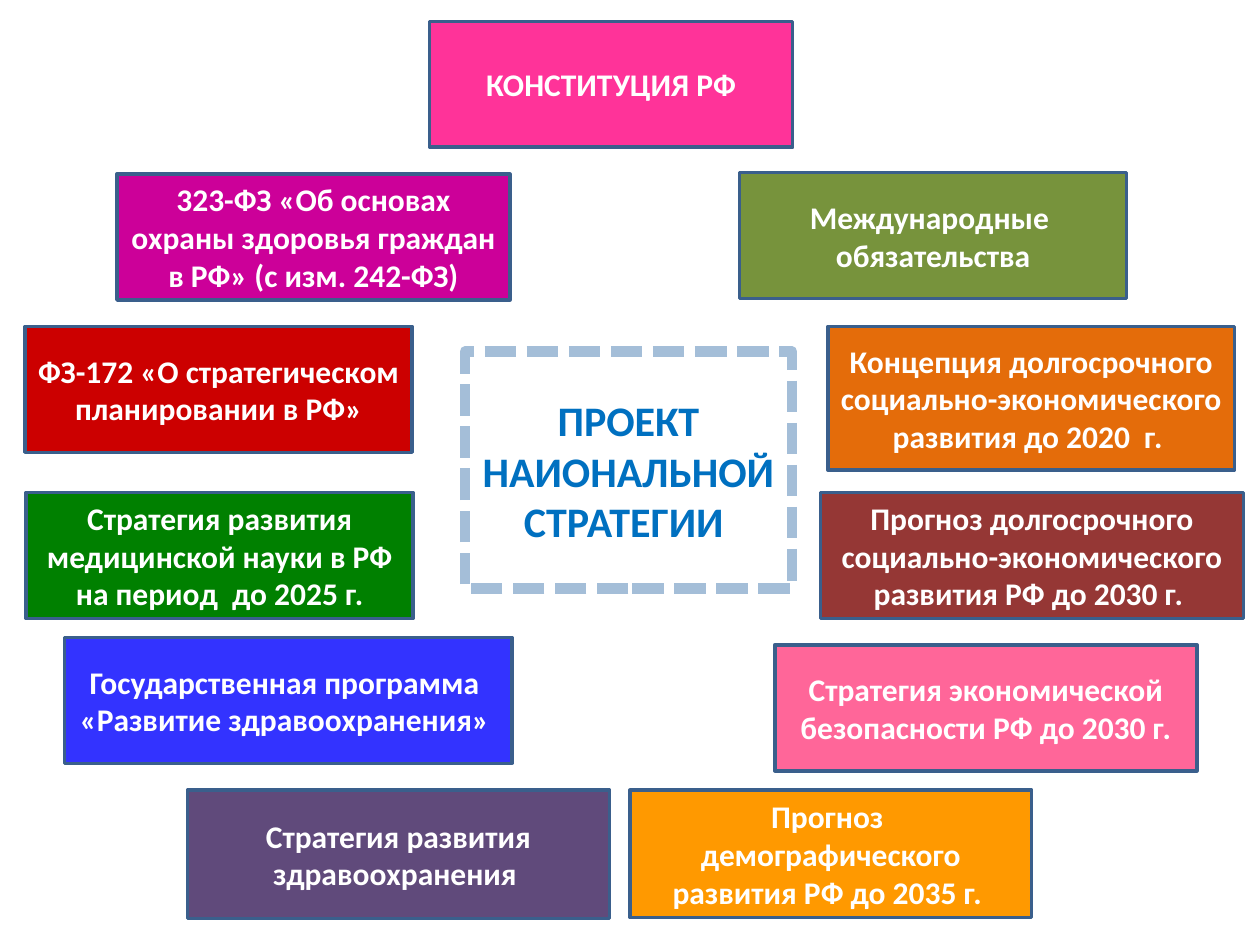
from pptx import Presentation
from pptx.dml.color import RGBColor
from pptx.enum.dml import MSO_LINE
from pptx.enum.shapes import MSO_SHAPE
from pptx.enum.text import MSO_ANCHOR, PP_ALIGN
from pptx.util import Cm, Pt

ROW_HEIGHT = 2.54
SOURCES = [
    ("ФЗ-172 «О стратегическом планировании в РФ»", "CC0000", 0.51, 6.58, 7.8, ROW_HEIGHT),
    ("Международные \nобязательства", "77933C", 14.91, 3.48, 7.8, ROW_HEIGHT),
    ("Концепция долгосрочного социально-экономического развития до 2020  г. ",
     "E46C0A", 16.69, 6.58, 8.2, 2.9),
    ("Прогноз долгосрочного социально-экономического развития РФ до 2030 г. ",
     "953735", 16.54, 9.93, 8.53, ROW_HEIGHT),
    ("Прогноз  демографического развития РФ до 2035 г. ", "FF9900", 12.7, 15.93, 8.1, 2.57),
    ("Стратегия развития здравоохранения ", "604A7B", 3.78, 15.93, 8.51, 2.59),
    ("Стратегия развития медицинской науки в РФ на период  до 2025 г.",
     "008000", 0.53, 9.93, 7.8, ROW_HEIGHT),
    ("КОНСТИТУЦИЯ РФ", "FF3399", 8.66, 0.43, 7.32, ROW_HEIGHT),
    ("323-ФЗ «Об основах охраны здоровья граждан в РФ» (с изм. 242-ФЗ)",
     "CC0099", 2.36, 3.51, 7.92, ROW_HEIGHT),
    ("Стратегия экономической безопасности РФ до 2030 г.",
     "FF6699", 15.62, 13.0, 8.51, ROW_HEIGHT),
    ("Государственная программа \n«Развитие здравоохранения» ",
     "3333FF", 1.3, 12.85, 9.02, ROW_HEIGHT),
]


def color(hex_value):
    """Return the colour for a hex string."""
    return RGBColor.from_string(hex_value)


def add_box(slide, text, fill, left, top, width, height,
            border="3A5F8C", border_width=2, text_color="FFFFFF", size=18):
    """Add a bordered rectangle with bold centred text and return it."""
    box = slide.shapes.add_shape(MSO_SHAPE.RECTANGLE, Cm(left), Cm(top), Cm(width), Cm(height))
    box.shadow.inherit = False
    box.fill.solid()
    box.fill.fore_color.rgb = color(fill)
    box.line.color.rgb = color(border)
    box.line.width = Pt(border_width)
    frame = box.text_frame
    frame.word_wrap = True
    frame.vertical_anchor = MSO_ANCHOR.MIDDLE
    frame.text = text
    for paragraph in frame.paragraphs:
        paragraph.alignment = PP_ALIGN.CENTER
        paragraph.font.name = "Calibri"
        paragraph.font.size = Pt(size)
        paragraph.font.bold = True
        paragraph.font.color.rgb = color(text_color)
    return box


def add_project(slide):
    """Add the dashed central box naming the strategy project."""
    project = add_box(slide, "ПРОЕКТ\nНАИОНАЛЬНОЙ\nСТРАТЕГИИ ", "FFFFFF", 9.37, 7.09, 6.6, 4.78,
                      border="A4BED8", border_width=6, text_color="0070C0", size=24)
    project.line.dash_style = MSO_LINE.SQUARE_DOT


def main():
    """Build and save the slide."""
    presentation = Presentation()
    presentation.slide_width = Cm(25.4)
    presentation.slide_height = Cm(19.05)
    slide = presentation.slides.add_slide(presentation.slide_layouts[6])
    add_project(slide)
    for source in SOURCES:
        add_box(slide, *source)
    presentation.save("out.pptx")


if __name__ == "__main__":
    main()
